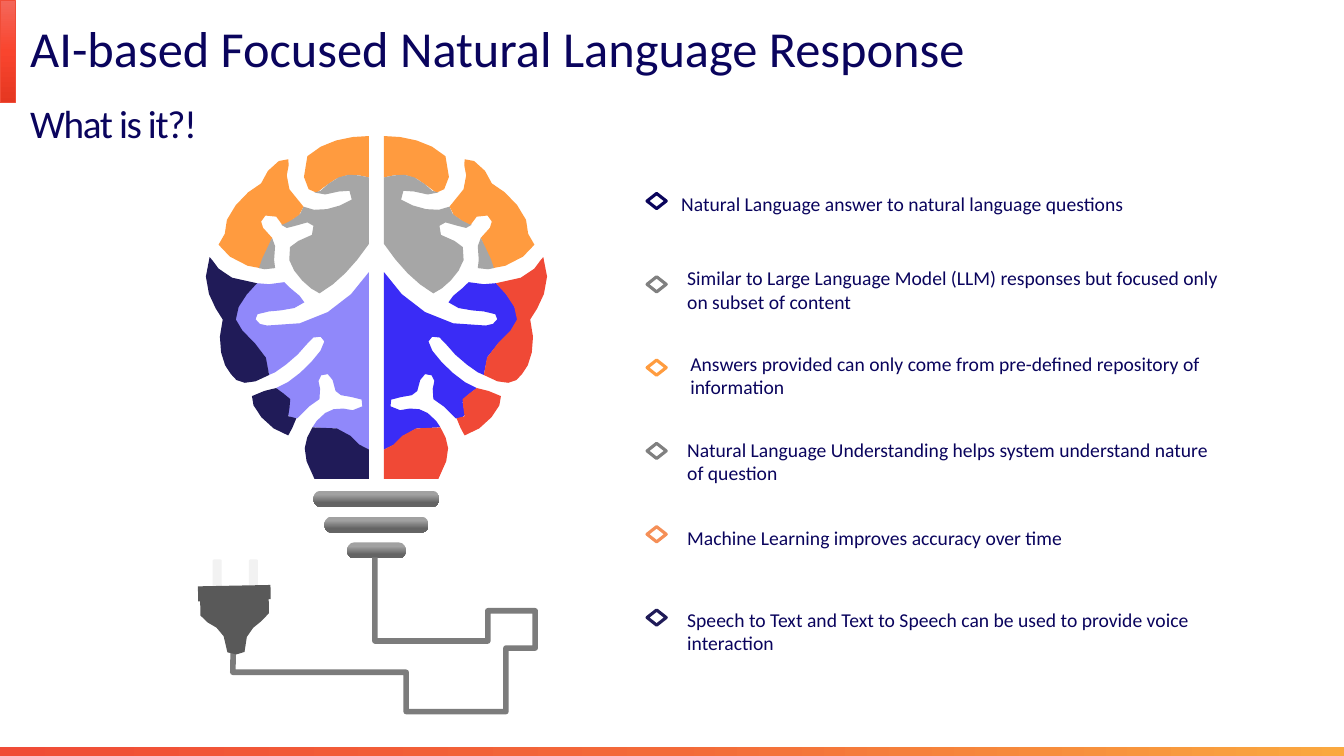
"""Build a slide on AI-based focused responses with a brain-shaped light bulb."""
import copy
import dataclasses
import math

import pptx
import pptx.dml.color
import pptx.enum.shapes
import pptx.enum.text
import pptx.oxml
import pptx.oxml.ns
import pptx.util

Pt = pptx.util.Pt
Shape = pptx.enum.shapes.MSO_SHAPE
Anchor = pptx.enum.text.MSO_ANCHOR
AutoSize = pptx.enum.text.MSO_AUTO_SIZE


@dataclasses.dataclass(frozen=True)
class Theme:
    """Colours and type sizes of the slide."""
    font: str = "Calibri"
    title_size: int = 36
    subtitle_size: int = 28
    item_size: int = 14
    text: str = "0A045D"
    navy: str = "201B58"
    ink: str = "0A045B"
    orange: str = "FF9B3F"
    amber: str = "FF9C3F"
    coral: str = "F58F57"
    red: str = "F04936"
    blue: str = "3A2CF6"
    lilac: str = "9088FA"
    grey: str = "A6A6A6"
    marker_grey: str = "808080"
    cable: str = "7C7C7C"
    plug: str = "595959"
    prong: str = "F2F2F2"
    tab_line: str = "F04C37"
    tab: tuple = ((0, "F4675A"), (0.5, "F9452E"), (1, "E53721"))
    footer: tuple = ((0, "F04C37"), (0.5, "F36A39"), (1, "FAA83F"))
    ring: tuple = ((0.24, "A1A1A1"), (0.74, "646464"))


THEME = Theme()
UNIT = 0.72
MIRROR_SUM = 747
STEP_LENGTH = 15
MAX_STEPS = 4

ITEMS = [
    (479.5, 133.2, 25.9, THEME.ink, "Natural Language answer to natural language questions"),
    (483.8, 186.5, 43.9, THEME.marker_grey,
     "Similar to Large Language Model (LLM) responses but focused only on subset of content"),
    (486, 247.7, 43.9, THEME.amber,
     "Answers provided can only come from pre-defined repository of information"),
    (483.8, 308.9, 43.9, THEME.marker_grey,
     "Natural Language Understanding helps system understand nature of question"),
    (483.8, 372.2, 25.9, THEME.coral, "Machine Learning improves accuracy over time"),
    (483.8, 430.6, 43.9, THEME.navy,
     "Speech to Text and Text to Speech can be used to provide voice interaction"),
]

CROWN = [(381, 135), (402, 135, 426, 140, 442, 155), (454, 188, 432, 199, 426, 186),
         (409, 171, 396, 172, 381, 176)]
UPPER_CORE = [
    (381, 176), (391, 174, 401, 171, 411, 176), (422, 180, 430, 194, 435, 191),
    (425, 200, 393, 177, 398, 198), (412, 207, 434, 212, 446, 205),
    (446, 213, 456, 217, 468, 223), (466, 226, 460, 228, 454, 224),
    (445, 217, 437, 222, 436, 224), (435, 231, 436, 236, 451, 239),
    (460, 239, 461, 249, 460, 258), (456, 272, 440, 287, 430, 291),
    (412, 281, 396, 264, 381, 242)]
LOWER_CORE = [
    (381, 270), (401, 301, 436, 327, 482, 323), (492, 324, 503, 310, 480, 309),
    (472, 308, 451, 308, 445, 300), (445, 295, 463, 284, 465, 280),
    (472, 282, 489, 283, 492, 281), (498, 285, 515, 305, 514, 316),
    (512, 332, 477, 345, 480, 372), (477, 373, 451, 354, 443, 342),
    (436, 328, 417, 333, 429, 348), (439, 362, 458, 380, 473, 385),
    (470, 391, 460, 391, 459, 399), (467, 417, 456, 416, 452, 415),
    (445, 407, 435, 398, 430, 396), (427, 389, 431, 382, 431, 378),
    (432, 371, 419, 367, 417, 377), (417, 379, 415, 385, 414, 388),
    (414, 391, 405, 394, 398, 394), (384, 392, 382, 407, 397, 407),
    (405, 406, 408, 404, 416, 406), (423, 406, 436, 420, 437, 424),
    (396, 419, 397, 445, 381, 446)]
SHOULDER = [
    (461, 158), (468, 154, 485, 170, 488, 182), (504, 190, 527, 215, 524, 232),
    (549, 244, 497, 269, 489, 266), (488, 261, 480, 244, 477, 236),
    (479, 233, 482, 231, 486, 226), (491, 222, 487, 208, 473, 215),
    (470, 219, 469, 220, 467, 223), (461, 220, 446, 214, 446, 205),
    (475, 180, 456, 163, 461, 158)]
SLIVER = [(477, 236), (470, 238, 478, 264, 474, 266), (486, 268, 484, 267, 490, 266),
          (490, 261, 479, 241, 477, 236)]
SIDE = [(492, 281), (534, 278, 536, 254, 539, 255), (550, 282, 534, 305, 526, 317),
        (533, 340, 526, 363, 518, 371), (512, 381, 500, 384, 480, 372),
        (476, 347, 511, 331, 513, 317), (514, 305, 502, 291, 492, 281)]
LOWER_SIDE = [(473, 385), (479, 386, 490, 389, 497, 393), (500, 402, 481, 427, 461, 432),
              (458, 428, 456, 422, 453, 415), (469, 419, 456, 401, 459, 396),
              (461, 391, 470, 390, 473, 385)]
BASE = [(381, 446), (397, 444, 395, 419, 437, 424), (445, 438, 450, 448, 435, 475), (381, 475)]

LOBES = [
    (CROWN, THEME.orange, THEME.orange), (UPPER_CORE, THEME.grey, THEME.grey),
    (LOWER_CORE, THEME.blue, THEME.lilac), (SHOULDER, THEME.orange, THEME.orange),
    (SLIVER, THEME.grey, THEME.grey), (SIDE, THEME.red, THEME.navy),
    (LOWER_SIDE, THEME.red, THEME.navy), (BASE, THEME.red, THEME.navy),
]
CABLE = [(372, 553), (372, 636), (484, 636), (484, 606), (531, 606), (531, 643), (502, 643),
         (502, 706), (403, 706), (403, 667), (231, 667), (232, 619)]
PLUG = [(197, 581), (269, 581), (269, 595), (267, 595), (267, 609), (259, 617),
        (251, 623, 242, 628, 242, 647), (238, 650, 230, 650, 225, 647),
        (224, 626, 215, 622, 206, 617), (199, 610), (199, 596), (197, 596)]


def rgb(value):
    """Return a colour from its hex value."""
    return pptx.dml.color.RGBColor.from_string(value)


def style_shape(shape, fill=None, line=None, width=0):
    """Set a solid fill and a line, or none, and drop the shadow."""
    shape.shadow.inherit = False
    if fill:
        shape.fill.solid()
        shape.fill.fore_color.rgb = rgb(fill)
    else:
        shape.fill.background()
    if line:
        shape.line.color.rgb = rgb(line)
        shape.line.width = Pt(width)
    else:
        shape.line.fill.background()


def add_preset(slide, kind, box, **style):
    """Add a styled preset shape."""
    shape = slide.shapes.add_shape(kind, *map(Pt, box))
    style_shape(shape, **style)
    return shape


def fill_gradient(shape, stops, angle):
    """Give a shape a linear gradient with any number of stops."""
    shape.fill.gradient()
    shape.fill.gradient_angle = angle
    stop_list = shape._element.spPr.find(".//" + pptx.oxml.ns.qn("a:gsLst"))
    for _ in stops[2:]:
        stop_list.append(copy.deepcopy(stop_list[-1]))
    for stop, (position, color) in zip(shape.fill.gradient_stops, stops):
        stop.position = position
        stop.color.rgb = rgb(color)


def trace(outline):
    """Turn line and Bézier segments into points, more of them on longer curves."""
    points = [outline[0]]
    for segment in outline[1:]:
        if len(segment) == 2:
            points.append(segment)
            continue
        start, first, second, end = points[-1], segment[:2], segment[2:4], segment[4:]
        length = math.dist(start, first) + math.dist(first, second) + math.dist(second, end)
        steps = min(MAX_STEPS, math.ceil(length / STEP_LENGTH))
        for step in range(1, steps + 1):
            t = step / steps
            weights = ((1 - t) ** 3, 3 * t * (1 - t) ** 2, 3 * t * t * (1 - t), t ** 3)
            points.append(tuple(sum(weight * value for weight, value in zip(weights, values))
                                for values in zip(start, first, second, end)))
    return points


def add_outline(slide, points, close=True, **style):
    """Add a styled freeform through the points."""
    corners = [(Pt(x * UNIT), Pt(y * UNIT)) for x, y in points]
    builder = slide.shapes.build_freeform(*corners[0])
    builder.add_line_segments(corners[1:], close=close)
    shape = builder.convert_to_shape()
    style_shape(shape, **style)
    return shape


def write_text(shape, text, size, auto_size=AutoSize.NONE, anchor=Anchor.TOP):
    """Write one left-aligned paragraph and return it with its run."""
    frame = shape.text_frame
    frame.word_wrap = True
    frame.auto_size = auto_size
    frame.vertical_anchor = anchor
    paragraph = frame.paragraphs[0]
    paragraph.alignment = pptx.enum.text.PP_ALIGN.LEFT
    paragraph.space_before = Pt(0)
    run = paragraph.add_run()
    run.text = text
    run.font.name = THEME.font
    run.font.size = Pt(size)
    run.font.color.rgb = rgb(THEME.text)
    return paragraph, run


def place(shape, *box):
    """Move and size a placeholder."""
    shape.left, shape.top, shape.width, shape.height = map(Pt, box)


def add_headings(slide):
    """Fill the title and body placeholders."""
    title, subtitle = slide.shapes.title, slide.placeholders[1]
    place(title, 14.4, 13.7, 794.2, 45.4)
    paragraph, _ = write_text(title, "AI-based Focused Natural Language Response",
                              THEME.title_size, anchor=Anchor.MIDDLE)
    paragraph.line_spacing = 0.9
    place(subtitle, 14.4, 71.3, 383.8, 43.9)
    paragraph, run = write_text(subtitle, "What is it?!", THEME.subtitle_size)
    paragraph.line_spacing = 0.9
    properties = paragraph._p.get_or_add_pPr()
    properties.set("marL", "0")
    properties.set("indent", "0")
    properties.append(pptx.oxml.parse_xml(f"<a:buNone {pptx.oxml.ns.nsdecls('a')}/>"))
    run._r.get_or_add_rPr().set("spc", "-100")


def add_bars(slide):
    """Add the corner tab and the footer bar."""
    tab = add_preset(slide, Shape.RECTANGLE, (0, 0, 10.8, 73.4), line=THEME.tab_line, width=0.5)
    fill_gradient(tab, THEME.tab, 270)
    footer = add_preset(slide, Shape.RECTANGLE, (0, 533.5, 960, 6.5))
    fill_gradient(footer, THEME.footer, 0)


def add_items(slide):
    """Add the diamond markers and their statements."""
    for index, (left, top, height, color, text) in enumerate(ITEMS):
        add_preset(slide, Shape.DIAMOND, (462.2, 138.2 + 59.5 * index, 13.7, 10.8), line=color, width=2.25)
        box = slide.shapes.add_textbox(*map(Pt, (left, top, 393.8, height)))
        write_text(box, text, THEME.item_size, AutoSize.SHAPE_TO_FIT_TEXT)


def add_bulb(slide):
    """Add the brain bulb with its rings, cable and plug."""
    for index, width in enumerate((90, 74.2, 41.8)):
        ring = add_preset(slide, Shape.ROUNDED_RECTANGLE,
                          (268.9 - width / 2, 350.6 + 18.4 * index, width, 11.5))
        ring.adjustments[0] = 0.44
        fill_gradient(ring, THEME.ring, 270)
    for outline, right_color, left_color in LOBES:
        points = trace(outline)
        add_outline(slide, points, fill=right_color)
        add_outline(slide, [(MIRROR_SUM - x, y) for x, y in points], fill=left_color)
    add_outline(slide, CABLE, close=False, line=THEME.cable, width=4)
    for left in (151.9, 177.8):
        add_preset(slide, Shape.ROUNDED_RECTANGLE, (left, 399.6, 6.5, 23), fill=THEME.prong)
    add_outline(slide, trace(PLUG), fill=THEME.plug).rotation = 358.9


def main():
    """Build and save the slide."""
    presentation = pptx.Presentation()
    presentation.slide_width, presentation.slide_height = Pt(960), Pt(540)
    slide = presentation.slides.add_slide(presentation.slide_layouts[1])
    add_bars(slide)
    add_headings(slide)
    add_items(slide)
    add_bulb(slide)
    presentation.save("out.pptx")


if __name__ == "__main__":
    main()
